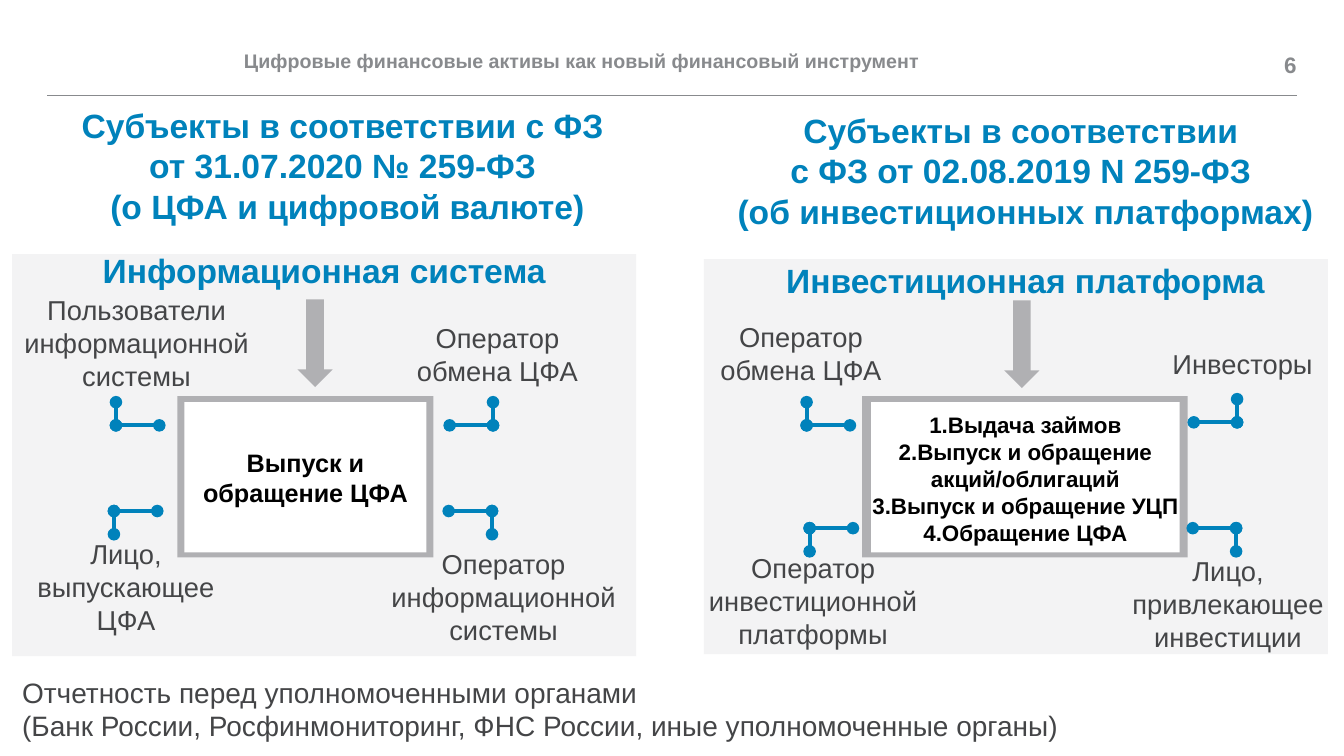
import pptx
import pptx.dml.color
import pptx.enum.shapes
import pptx.enum.text
import pptx.oxml
import pptx.util
from lxml import etree

Inches, Pt = pptx.util.Inches, pptx.util.Pt
RGBColor = pptx.dml.color.RGBColor
SHAPE = pptx.enum.shapes.MSO_SHAPE
ALIGN = pptx.enum.text.PP_ALIGN
MIDDLE = pptx.enum.text.MSO_ANCHOR.MIDDLE
TOP = pptx.enum.text.MSO_ANCHOR.TOP

BLUE = RGBColor(0x00, 0x82, 0xBB)
PANEL_GRAY = RGBColor(0xF3, 0xF3, 0xF4)
FRAME_GRAY = RGBColor(0xB0, 0xB0, 0xB3)
HEADER_GRAY = RGBColor(0x88, 0x8A, 0x8D)
TEXT_GRAY = RGBColor(0x44, 0x45, 0x47)
BLACK = RGBColor(0, 0, 0)
WHITE = RGBColor(255, 255, 255)


def add_block(slide, kind, box, fill):
    block = slide.shapes.add_shape(kind, *map(Inches, box))
    block.shadow.inherit = False
    block.fill.solid()
    block.fill.fore_color.rgb = fill
    block.line.fill.background()
    return block


def write(holder, text, size, color, bold=False, align=ALIGN.CENTER,
          anchor=TOP, numbered=False):
    frame = holder.text_frame
    frame.word_wrap = True
    frame.vertical_anchor = anchor
    frame.text = text
    for paragraph in frame.paragraphs:
        paragraph.alignment = align
        if numbered:
            properties = paragraph._p.get_or_add_pPr()
            properties.set("marL", "0")
            properties.set("indent", "0")
            number = etree.SubElement(properties, pptx.oxml.ns.qn("a:buAutoNum"))
            number.set("type", "arabicPeriod")
        for run in paragraph.runs:
            run.font.name = "Arial"
            run.font.size = Pt(size)
            run.font.bold = bold
            run.font.color.rgb = color
    return frame


def add_text(slide, box, text, size, color, **style):
    holder = slide.shapes.add_textbox(*map(Inches, box))
    return write(holder, text, size, color, **style)


def add_line(slide, start, end, color, width, dots=False):
    line = slide.shapes.add_connector(
        pptx.enum.shapes.MSO_CONNECTOR.STRAIGHT, *map(Inches, (*start, *end)))
    line.line.color.rgb = color
    line.line.width = Pt(width)
    if dots:
        outline = line.line._get_or_add_ln()
        for tag in ("a:headEnd", "a:tailEnd"):
            etree.SubElement(outline, pptx.oxml.ns.qn(tag)).set("type", "oval")
    etree.SubElement(line._element.spPr, pptx.oxml.ns.qn("a:effectLst"))


def add_elbow(slide, corner, right, down):
    """Dotted corner: right and down are +1 or -1."""
    x, y = corner
    add_line(slide, corner, (x, y + 0.23 * down), BLUE, 3, dots=True)
    add_line(slide, corner, (x + 0.43 * right, y), BLUE, 3, dots=True)


def add_header(slide, left, top, width):
    add_line(slide, (left, top + 0.52), (left + width, top + 0.52), HEADER_GRAY, 0.5)
    title = add_text(slide, (left + 1.95, top, 9.23, 0.35),
                     "Цифровые финансовые активы как новый финансовый инструмент",
                     14, HEADER_GRAY, bold=True, align=ALIGN.LEFT, anchor=MIDDLE)
    number = add_text(slide, (left + width - 0.81, top + 0.04, 0.81, 0.35), "6",
                      16, HEADER_GRAY, bold=True, align=ALIGN.RIGHT, anchor=MIDDLE)
    for frame in (title, number):
        frame.margin_left = frame.margin_right = 0
        frame.margin_top = frame.margin_bottom = 0


def add_panel(slide, box, law, system, arrow, operations, subjects, elbows):
    """Law heading above a gray panel; inner positions are relative to box."""
    left, top = box[:2]

    def place(inner):
        return (left + inner[0], top + inner[1], *inner[2:])

    add_block(slide, SHAPE.RECTANGLE, box, PANEL_GRAY)
    for heading_box, heading in (law, system):
        add_text(slide, place(heading_box), heading, 24, BLUE, bold=True)
    add_block(slide, SHAPE.DOWN_ARROW, place(arrow), FRAME_GRAY)

    # Framed operations in the middle
    add_block(slide, SHAPE.RECTANGLE, place(operations["frame"]), FRAME_GRAY)
    core = add_block(slide, SHAPE.RECTANGLE, place(operations["core"]), WHITE)
    if "list" in operations:
        add_text(slide, place(operations["list"]), operations["text"], 16, BLACK,
                 bold=True, numbered=True)
    else:
        write(core, operations["text"], 18, BLACK, bold=True, anchor=MIDDLE)

    # Subjects around it
    for subject_box, subject in subjects:
        add_text(slide, place(subject_box), subject, 19.5, TEXT_GRAY)
    directions = ((1, -1), (-1, -1), (1, 1), (-1, 1))
    for corner, (right, down) in zip(elbows, directions):
        add_elbow(slide, place(corner), right, down)


def add_reporting(slide, box):
    add_text(slide, box,
             "Отчетность перед уполномоченными органами \v"
             "(Банк России, Росфинмониторинг, ФНС России, иные уполномоченные органы)",
             20, TEXT_GRAY, align=ALIGN.LEFT)


def main():
    deck = pptx.Presentation()
    deck.slide_width, deck.slide_height = Inches(13.33), Inches(7.5)
    slide = deck.slides.add_slide(deck.slide_layouts[6])

    add_header(slide, 0.47, 0.43, 12.39)

    # Information system
    add_panel(
        slide, (0.12, 2.52, 6.19, 3.99),
        law=((0.46, -1.53, 5.73, 1.31),
             "Субъекты в соответствии с ФЗ \vот 31.07.2020 № 259-ФЗ \v"
             "(о ЦФА и цифровой валюте)"),
        system=((0.72, -0.09, 4.75, 0.5), "Информационная система"),
        arrow=(2.83, 0.45, 0.35, 0.87),
        operations={"frame": (1.64, 1.41, 2.54, 1.6),
                    "core": (1.71, 1.47, 2.4, 1.49),
                    "text": "Выпуск и обращение ЦФА"},
        subjects=[((-0.18, 0.34, 2.83, 1.11), "Пользователи информационной системы"),
                  ((3.78, 0.62, 2.07, 0.77), "Оператор обмена ЦФА"),
                  ((-0.14, 2.76, 2.54, 1.11), "Лицо, выпускающее ЦФА"),
                  ((3.2, 2.86, 3.35, 1.11), "Оператор информационной системы")],
        elbows=[(1.03, 1.7), (4.77, 1.7), (1.01, 2.55), (4.76, 2.55)])

    # Investment platform
    add_panel(
        slide, (6.98, 2.57, 6.19, 3.92),
        law=((-0.1, -1.53, 6.58, 1.31),
             "Субъекты в соответствии \vс ФЗ от 02.08.2019 N 259-ФЗ \v"
             "(об инвестиционных платформах)"),
        system=((0.57, -0.04, 5.24, 0.5), "Инвестиционная платформа"),
        arrow=(2.98, 0.41, 0.35, 0.87),
        operations={"frame": (1.57, 1.36, 3.23, 1.6),
                    "core": (1.66, 1.42, 3.06, 1.49),
                    "list": (1.44, 1.46, 3.5, 1.45),
                    "text": "Выдача займов\nВыпуск и обращение акций/облигаций\n"
                            "Выпуск и обращение УЦП\nОбращение ЦФА"},
        subjects=[((-0.07, 0.56, 2.07, 0.77), "Оператор обмена ЦФА"),
                  ((4.51, 0.83, 1.67, 0.44), "Инвесторы"),
                  ((-0.16, 2.85, 2.49, 1.11), "Оператор инвестиционной платформы"),
                  ((4.04, 2.88, 2.32, 1.11), "Лицо, привлекающее инвестиции")],
        elbows=[(1.02, 1.65), (5.29, 1.62), (1.05, 2.67), (5.28, 2.67)])

    add_reporting(slide, (0.12, 6.65, 13.05, 0.77))
    deck.save("out.pptx")


if __name__ == "__main__":
    main()
